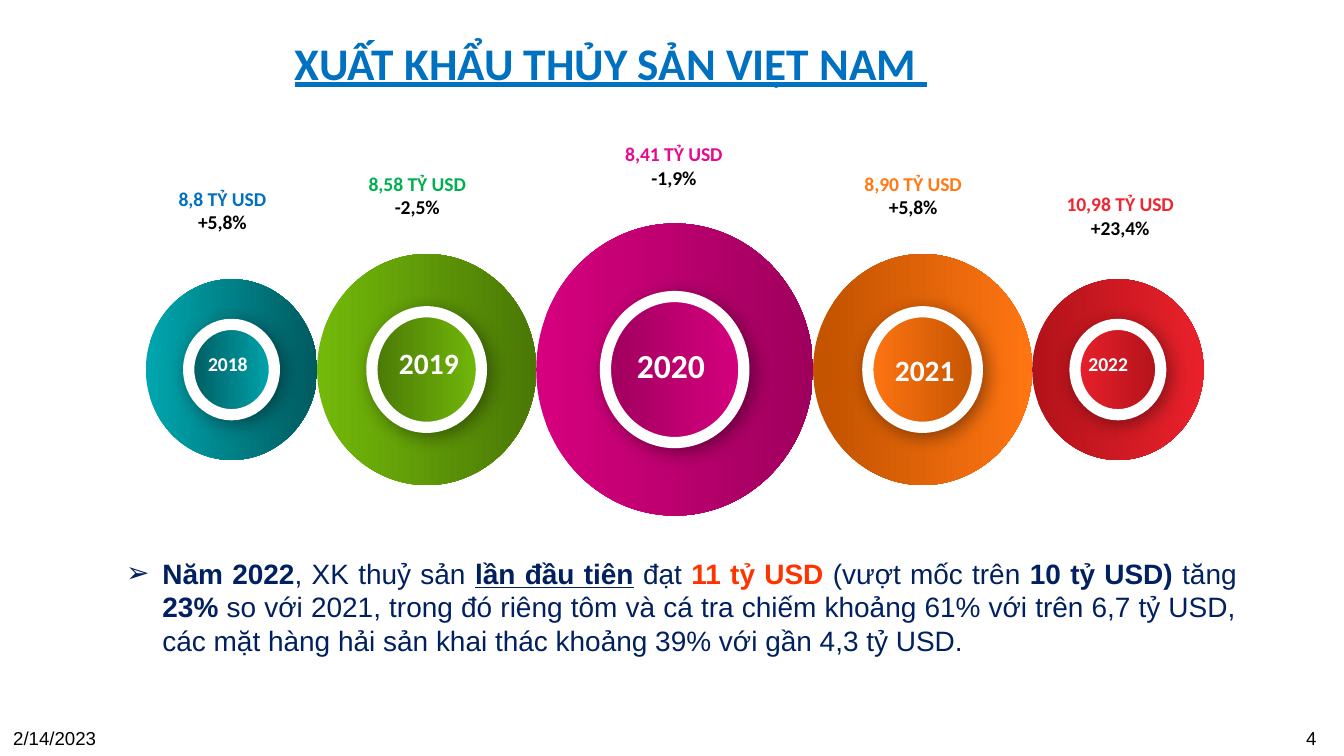
import pptx
import pptx.util
import pptx.dml.color
import pptx.enum.shapes
import pptx.enum.text
import pptx.oxml
import pptx.oxml.ns

ALIGN = pptx.enum.text.PP_ALIGN
SLIDE_WIDTH = 10
SLIDE_HEIGHT = SLIDE_WIDTH * 9 / 16
UNIT = SLIDE_WIDTH / 100
CHAIN_LEFT, CHAIN_MIDDLE = 10.85, 27.5
HEIGHT_RATIO, INNER_SHARE = 1.055, 0.5
VALUE_SIZE = (16.3, 5.7)

YEARS = [
    {"year": "2018", "value": "8,8 TỶ USD", "change": "+5,8%", "color": "0070C0",
     "gradient": ("00A6AE", "005B60"), "start": 0, "diameter": 12.75,
     "year_box": (14.5, 25.7, 6.5, 3.5), "size": 10.5, "value_at": (8.4, 13.4)},
    {"year": "2019", "value": "8,58 TỶ USD", "change": "-2,5%", "color": "00B050",
     "gradient": ("73B909", "4A7806"), "start": 0, "diameter": 16.3,
     "year_box": (28.7, 25.2, 7.8, 7.9), "size": 15.8, "value_at": (22.9, 12.3)},
    {"year": "2020", "value": "8,41 TỶ USD", "change": "-1,9%", "color": "E8098E",
     "gradient": ("D6007F", "9F005D"), "start": 0, "diameter": 20.6,
     "year_box": (46.4, 25.2, 10, 5), "size": 18, "value_at": (42, 10.1)},
    {"year": "2021", "value": "8,90 TỶ USD", "change": "+5,8%", "color": "FF7915",
     "gradient": ("C45400", "FF7512"), "start": 0.06, "diameter": 16.3,
     "year_box": (65.6, 25.7, 9, 4.6), "size": 15.8, "value_at": (59.8, 12.3)},
    {"year": "2022", "value": "10,98 TỶ USD", "change": "+23,4%", "color": "EF252F",
     "gradient": ("B2121A", "E9212B"), "start": 0, "diameter": 12.75,
     "year_box": (80, 25.7, 6.5, 3.5), "size": 10.5, "value_at": (75.2, 13.8)},
]

BODY = {"name": "Arial", "size": 15, "color": "002060"}
BOLD = BODY | {"bold": True}
SUMMARY = [
    ("Năm 2022", BOLD),
    (", XK thuỷ sản ", BODY),
    ("lần đầu tiên", BOLD | {"underline": True}),
    (" đạt ", BODY),
    ("11 tỷ USD ", BOLD | {"color": "FF3300"}),
    ("(vượt mốc trên ", BODY),
    ("10 tỷ USD) ", BOLD),
    ("tăng", BODY),
    (" 23% ", BOLD),
    ("so với 2021, trong đó riêng tôm và cá tra chiếm khoảng 61% với trên 6,7 tỷ USD, "
     "các mặt hàng hải sản khai thác khoảng 39% với gần 4,3 tỷ USD.", BODY),
]
TITLE = {"name": "Calibri", "size": 24.2, "color": "0070C0", "bold": True, "underline": True}
FOOTER = {"name": "Arial", "size": 10, "color": "000000"}
LABEL = {"name": "Calibri", "size": 10.5, "color": "000000", "bold": True}

SHADOW = (
    '<a:effectLst %s><a:outerShdw blurRad="127000" dist="38100" dir="2700000" algn="tl" '
    'rotWithShape="0"><a:srgbClr val="000000"><a:alpha val="40000"/></a:srgbClr>'
    '</a:outerShdw></a:effectLst>' % pptx.oxml.ns.nsdecls("a")
)
BULLETS = [
    '<a:buFont %s typeface="Arial"/>' % pptx.oxml.ns.nsdecls("a"),
    '<a:buChar %s char="➢"/>' % pptx.oxml.ns.nsdecls("a"),
]


def rgb(color):
    return pptx.dml.color.RGBColor.from_string(color)


def place(box):
    return [pptx.util.Inches(value * UNIT) for value in box]


def add_text(slide, box, paragraphs, align=ALIGN.LEFT):
    shape = slide.shapes.add_textbox(*place(box))
    frame = shape.text_frame
    frame.word_wrap = True
    for index, runs in enumerate(paragraphs):
        paragraph = frame.paragraphs[0] if index == 0 else frame.add_paragraph()
        paragraph.alignment = align
        for text, style in runs:
            run = paragraph.add_run()
            run.text = text
            for key, value in style.items():
                if key == "color":
                    run.font.color.rgb = rgb(value)
                else:
                    setattr(run.font, key, pptx.util.Pt(value) if key == "size" else value)
    return shape


def add_circle(slide, center, diameter, colors, start, angle):
    height = diameter * HEIGHT_RATIO
    box = (center - diameter / 2, CHAIN_MIDDLE - height / 2, diameter, height)
    shape = slide.shapes.add_shape(pptx.enum.shapes.MSO_SHAPE.OVAL, *place(box))
    shape.shadow.inherit = False
    shape.line.fill.background()
    shape.fill.gradient()
    shape.fill.gradient_angle = angle
    for stop, color, position in zip(shape.fill.gradient_stops, colors, (start, 1)):
        stop.color.rgb = rgb(color)
        stop.position = position
    return shape


def add_ring(slide, center, diameter, colors):
    shape = add_circle(slide, center, diameter, colors, 0, 180)
    shape.line.color.rgb = rgb("FFFFFF")
    shape.line.width = pptx.util.Pt(6)
    properties = shape._element.spPr
    properties.remove(properties.find(pptx.oxml.ns.qn("a:effectLst")))
    properties.append(pptx.oxml.parse_xml(SHADOW))


def add_summary(slide):
    shape = add_text(slide, (8.4, 40.9, 84.6, 8.6), [SUMMARY], ALIGN.JUSTIFY)
    properties = shape.text_frame.paragraphs[0]._p.get_or_add_pPr()
    indent = pptx.util.Inches(0.27)
    properties.set("marL", str(indent))
    properties.set("indent", str(-indent))
    for bullet in BULLETS:
        properties.append(pptx.oxml.parse_xml(bullet))


def main():
    presentation = pptx.Presentation()
    presentation.slide_width = pptx.util.Inches(SLIDE_WIDTH)
    presentation.slide_height = pptx.util.Inches(SLIDE_HEIGHT)
    slide = presentation.slides.add_slide(presentation.slide_layouts[6])

    add_text(slide, (96.2, 53.6, 3.8, 2.7), [[("4", FOOTER)]])
    add_text(slide, (0, 53.6, 8.9, 2.7), [[("2/14/2023", FOOTER)]])
    add_text(slide, (16.1, 2.1, 58.7, 5.1), [[("XUẤT KHẨU THỦY SẢN VIỆT NAM ", TITLE)]],
             ALIGN.CENTER)

    left = CHAIN_LEFT
    for item in YEARS:
        diameter = item["diameter"]
        center = left + diameter / 2
        add_circle(slide, center, diameter, item["gradient"], item["start"], 0)
        add_ring(slide, center, diameter * INNER_SHARE, item["gradient"])
        left += diameter

    for item in YEARS:
        year_style = LABEL | {"size": item["size"], "color": "FFFFFF"}
        add_text(slide, item["year_box"], [[(item["year"], year_style)]])
        value_style = LABEL | {"color": item["color"]}
        add_text(slide, item["value_at"] + VALUE_SIZE,
                 [[(item["value"], value_style)], [(item["change"], LABEL)]], ALIGN.CENTER)

    add_summary(slide)
    presentation.save("out.pptx")


if __name__ == "__main__":
    main()
